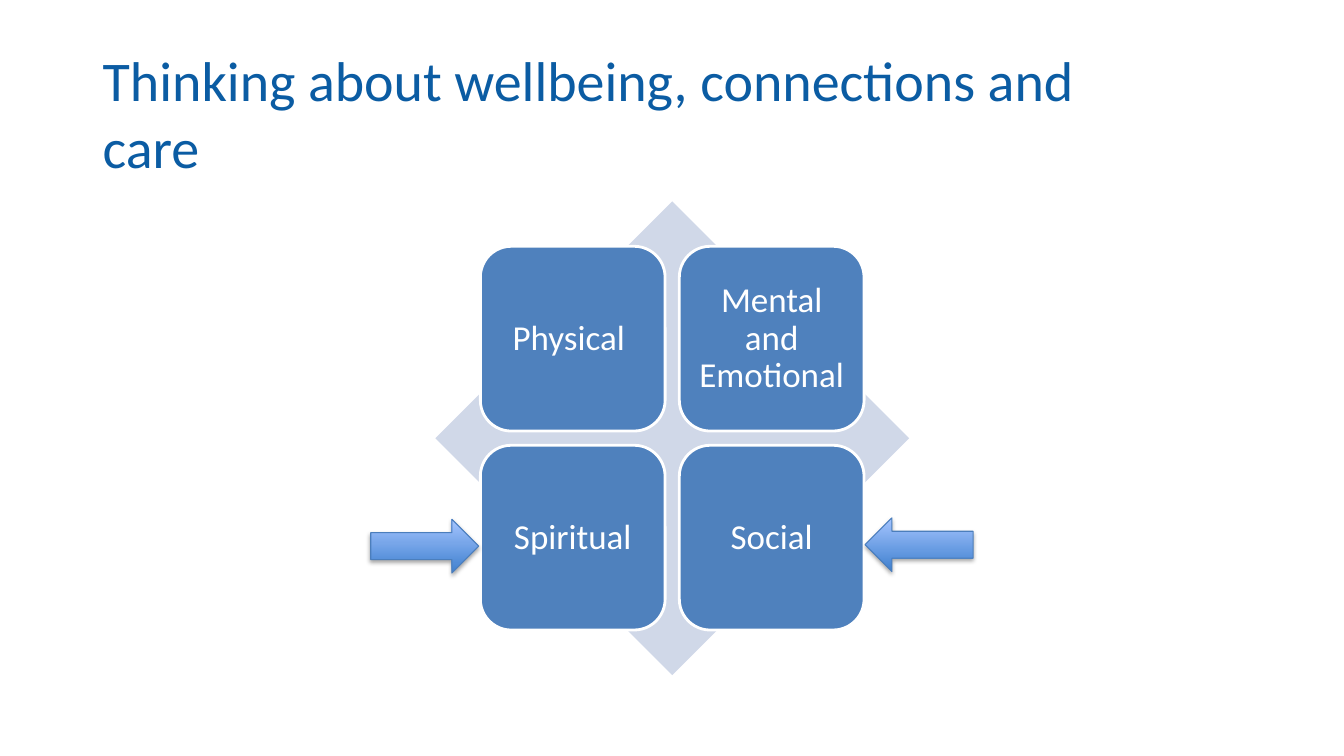
from lxml import etree
from pptx import Presentation
from pptx.dml.color import RGBColor
from pptx.enum.shapes import MSO_SHAPE
from pptx.enum.text import MSO_ANCHOR, PP_ALIGN
from pptx.oxml.ns import qn
from pptx.util import Pt

COLORS = {
    "title": "0B5CA3", "diamond": "D0D8E8", "tile": "4F81BD", "white": "FFFFFF",
    "arrow_bottom": "3F80CE", "arrow_top": "A4C4FF", "arrow_line": "4B7EBC", "shadow": "000000",
}
TITLE = "Thinking about wellbeing, connections and care"
TILES = [["Physical ", "Mental and Emotional"], ["Spiritual", "Social"]]


def color(name):
    """Return the named colour."""
    return RGBColor.from_string(COLORS[name])


def set_values(target, values):
    """Set each attribute of the target from a dict."""
    for name, value in values.items():
        setattr(target, name, value)


def write_text(shape, text, size, color_name, alignment, line_spacing=1.0):
    """Write one vertically centred, wrapped paragraph into a shape."""
    set_values(shape.text_frame, {"word_wrap": True, "vertical_anchor": MSO_ANCHOR.MIDDLE})
    paragraph = shape.text_frame.paragraphs[0]
    set_values(paragraph, {"text": text, "alignment": alignment, "line_spacing": line_spacing})
    set_values(paragraph.font, {"name": "Calibri", "size": Pt(size)})
    paragraph.font.color.rgb = color(color_name)


def add_block(slide, kind, box, fill, line=None):
    """Add a flat preset shape with a solid fill and an optional white line."""
    shape = slide.shapes.add_shape(kind, *map(Pt, box))
    shape.shadow.inherit = False
    shape.fill.solid()
    shape.fill.fore_color.rgb = color(fill)
    if line:
        shape.line.color.rgb = color("white")
        shape.line.width = Pt(line)
    else:
        shape.line.fill.background()
    return shape


def add_title(slide, left, top, width, height):
    """Add the slide title."""
    title = slide.shapes.add_textbox(Pt(left), Pt(top), Pt(width), Pt(height))
    write_text(title, TITLE, 40, "title", PP_ALIGN.LEFT)


def add_matrix(slide, left, top, size):
    """Add the diamond and its two by two tiles inside a square box."""
    add_block(slide, MSO_SHAPE.DIAMOND, (left, top, size, size), "diamond")
    margin, tile_size, pitch = 0.095 * size, 0.39 * size, 0.42 * size
    for row, labels in enumerate(TILES):
        for column, label in enumerate(labels):
            box = (left + margin + column * pitch, top + margin + row * pitch, tile_size, tile_size)
            tile = add_block(slide, MSO_SHAPE.ROUNDED_RECTANGLE, box, "tile", 2)
            sides = ("left", "right", "top", "bottom")
            set_values(tile.text_frame, {f"margin_{side}": Pt(7.2) for side in sides})
            write_text(tile, label, 25, "white", PP_ALIGN.CENTER, 0.9)


def add_arrow(slide, kind, left, top, width, height):
    """Add a block arrow with a vertical gradient and a soft shadow."""
    arrow = slide.shapes.add_shape(kind, Pt(left), Pt(top), Pt(width), Pt(height))
    arrow.fill.gradient()
    arrow.fill.gradient_angle = 90
    for stop, name in zip(arrow.fill.gradient_stops, ("arrow_bottom", "arrow_top")):
        stop.color.rgb = color(name)
    arrow.line.color.rgb = color("arrow_line")
    arrow.line.width = Pt(0.75)
    arrow.shadow.inherit = False
    effects = arrow.element.spPr.find(qn("a:effectLst"))
    shadow = etree.SubElement(effects, qn("a:outerShdw"), blurRad=str(Pt(3.1)),
                              dist=str(Pt(1.8)), dir="5400000", rotWithShape="0")
    shade = etree.SubElement(shadow, qn("a:srgbClr"), val=COLORS["shadow"])
    etree.SubElement(shade, qn("a:alpha"), val="35000")


def main():
    """Build and save the wellbeing slide."""
    presentation = Presentation()
    set_values(presentation, {"slide_width": Pt(960), "slide_height": Pt(540)})
    slide = presentation.slides.add_slide(presentation.slide_layouts[6])
    add_title(slide, 66.3, 28, 725.8, 104.4)
    add_matrix(slide, 311, 143.8, 338.4)
    add_arrow(slide, MSO_SHAPE.RIGHT_ARROW, 264.8, 370.9, 77.2, 38.4)
    add_arrow(slide, MSO_SHAPE.LEFT_ARROW, 617.9, 369.9, 77.2, 38.4)
    presentation.save("out.pptx")


if __name__ == "__main__":
    main()
